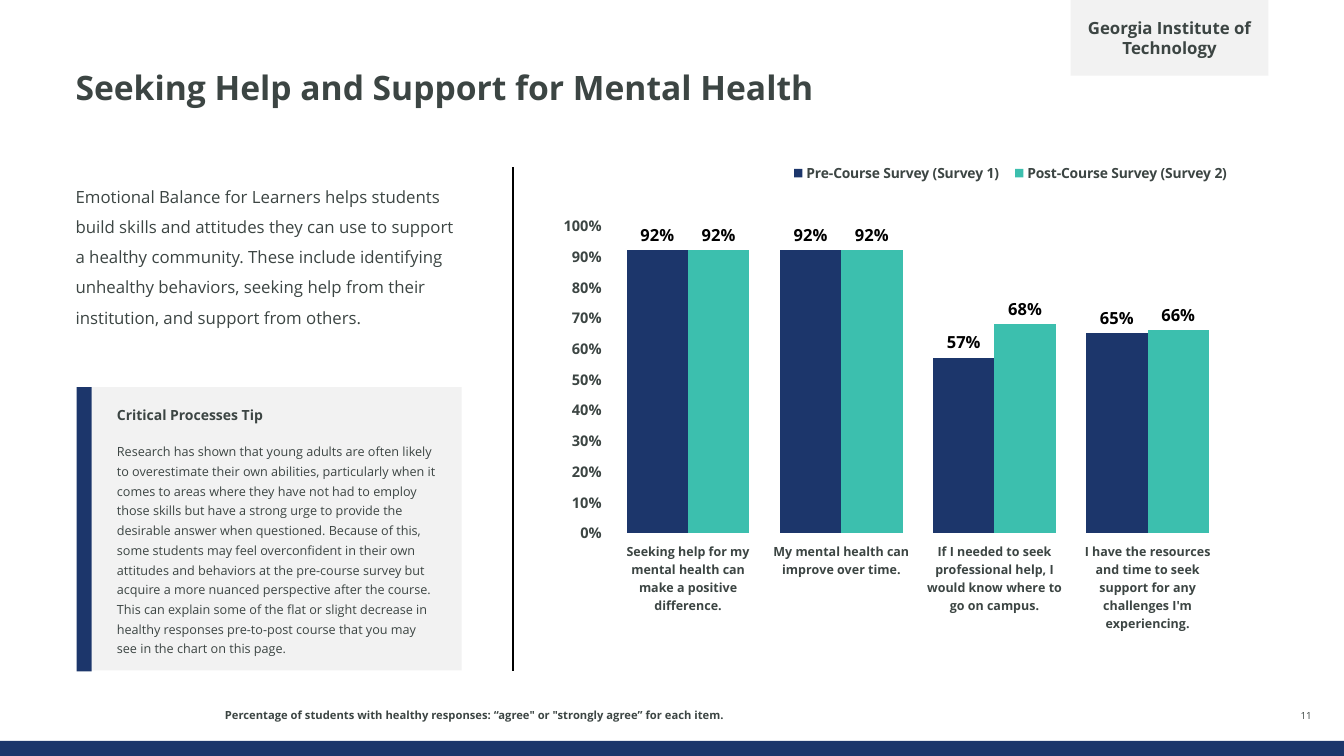
from dataclasses import dataclass

from lxml import etree
from pptx import Presentation
from pptx.chart.data import CategoryChartData
from pptx.dml.color import RGBColor
from pptx.enum.chart import XL_CHART_TYPE, XL_LABEL_POSITION, XL_LEGEND_POSITION
from pptx.enum.shapes import MSO_CONNECTOR, MSO_SHAPE
from pptx.enum.text import MSO_ANCHOR, PP_ALIGN
from pptx.oxml import parse_xml
from pptx.oxml.ns import nsdecls, qn
from pptx.util import Inches, Length, Pt

COLUMNS = XL_CHART_TYPE.COLUMN_CLUSTERED
OUTSIDE_END = XL_LABEL_POSITION.OUTSIDE_END
LEGEND_TOP = XL_LEGEND_POSITION.TOP
RECTANGLE = MSO_SHAPE.RECTANGLE
STRAIGHT = MSO_CONNECTOR.STRAIGHT
TOP, MIDDLE, BOTTOM = MSO_ANCHOR.TOP, MSO_ANCHOR.MIDDLE, MSO_ANCHOR.BOTTOM
LEFT, CENTER = PP_ALIGN.LEFT, PP_ALIGN.CENTER

Box = tuple[float, float, float, float]


@dataclass(frozen=True)
class Theme:
    font: str = "Open Sans"
    ink: str = "3C4543"
    black: str = "000000"
    navy: str = "1C366B"
    teal: str = "3CBFAE"
    panel: str = "F2F2F2"
    title: float = 24
    body: float = 12
    tip_heading: float = 10
    tip: float = 9
    footnote: float = 8
    page: float = 7
    category: float = 9
    percent: float = 10.5
    legend: float = 10
    value: float = 11.9


@dataclass(frozen=True)
class Line:
    text: str
    size: float
    bold: bool = False
    align: PP_ALIGN = LEFT
    spacing: float | Length = 1.0
    before: float = 0
    after: float = 0


@dataclass(frozen=True)
class TextBlock:
    box: Box
    line: Line
    anchor: MSO_ANCHOR = TOP


@dataclass(frozen=True)
class Survey:
    name: str
    values: tuple[float, ...]
    color: str


THEME = Theme()

TEXT_BLOCKS = (
    TextBlock((0.75, 0.71, 11.83, 0.7),
              Line("Seeking Help and Support for Mental Health", THEME.title, True, spacing=0.9)),
    TextBlock((0.75, 1.75, 3.83, 1.91),
              Line("Emotional Balance for Learners helps students build skills and attitudes they can "
                   "use to support a healthy community. These include identifying unhealthy behaviors, "
                   "seeking help from their institution, and support from others.",
                   THEME.body, spacing=1.5)),
    TextBlock((2.23, 7.01, 6.01, 0.15),
              Line("Percentage of students with healthy responses: “agree\" or \"strongly agree” "
                   "for each item.", THEME.footnote, True, spacing=Pt(12), after=2), BOTTOM),
    TextBlock((12.7, 7.01, 0.51, 0.15), Line("11", THEME.page, align=CENTER), BOTTOM),
)

TIP = (
    Line("Critical Processes Tip", THEME.tip_heading, True, spacing=1.3),
    Line("Research has shown that young adults are often likely to overestimate their own abilities, "
         "particularly when it comes to areas where they have not had to employ those skills but have "
         "a strong urge to provide the desirable answer when questioned. Because of this, some "
         "students may feel overconfident in their own attitudes and behaviors at the pre-course "
         "survey but acquire a more nuanced perspective after the course. This can explain some of "
         "the flat or slight decrease in healthy responses pre-to-post course that you may see in "
         "the chart on this page.", THEME.tip, spacing=1.3, before=12),
)

STATEMENTS = (
    "Seeking help for my mental health can make a positive difference.",
    "My mental health can improve over time.",
    "If I needed to seek professional help, I would know where to go on campus.",
    "I have the resources and time to seek support for any challenges I'm experiencing.",
)
SURVEYS = (
    Survey("Pre-Course Survey (Survey 1)", (0.92, 0.92, 0.57, 0.65), THEME.navy),
    Survey("Post-Course Survey (Survey 2)", (0.92, 0.92, 0.68, 0.66), THEME.teal),
)


def inches(box: Box) -> list[Length]:
    return [Inches(length) for length in box]


def style_font(font, size: float, bold: bool, color: str = THEME.ink) -> None:
    font.name, font.size, font.bold = THEME.font, Pt(size), bold
    font.color.rgb = RGBColor.from_string(color)


def write(frame, lines: tuple[Line, ...], anchor: MSO_ANCHOR, side_inset: float = 0) -> None:
    frame.word_wrap = True
    frame.vertical_anchor = anchor
    frame.margin_left = frame.margin_right = Inches(side_inset)
    frame.margin_top = frame.margin_bottom = 0
    for index, line in enumerate(lines):
        paragraph = frame.add_paragraph() if index else frame.paragraphs[0]
        paragraph.text = line.text
        paragraph.alignment = line.align
        paragraph.line_spacing = line.spacing
        paragraph.space_before, paragraph.space_after = Pt(line.before), Pt(line.after)
        style_font(paragraph.font, line.size, line.bold)


def add_block(shapes, box: Box, color: str):
    block = shapes.add_shape(RECTANGLE, *inches(box))
    block.shadow.inherit = False
    block.fill.solid()
    block.fill.fore_color.rgb = RGBColor.from_string(color)
    block.line.fill.background()
    return block


def add_divider(shapes, x: float, top: float, bottom: float) -> None:
    divider = shapes.add_connector(STRAIGHT, *inches((x, top, x, bottom)))
    divider.line.color.rgb = RGBColor.from_string(THEME.black)
    divider.line.width = Pt(1)
    etree.SubElement(divider.element.spPr, qn("a:effectLst"))


def manual_layout(box: Box, inner: bool = False):
    """Layout element holding fractions of the chart area."""
    target = '<c:layoutTarget val="inner"/>' if inner else ""
    modes = "".join(f'<c:{axis}Mode val="edge"/>' for axis in "xy")
    sizes = "".join(f'<c:{key} val="{value}"/>' for key, value in zip("xywh", box))
    return parse_xml(f'<c:layout {nsdecls("c")}><c:manualLayout>{target}{modes}{sizes}'
                     "</c:manualLayout></c:layout>")


def add_survey_chart(shapes, box: Box) -> None:
    data = CategoryChartData(number_format="0%")
    data.categories = STATEMENTS
    for survey in SURVEYS:
        data.add_series(survey.name, survey.values)
    chart = shapes.add_chart(COLUMNS, *inches(box), data).chart
    chart.has_title = False
    style_font(chart.font, THEME.legend, False)

    # Columns and value labels
    plot = chart.plots[0]
    plot.vary_by_categories = False
    plot.gap_width, plot.overlap = 50, 0
    for series, survey in zip(plot.series, SURVEYS):
        series.format.fill.solid()
        series.format.fill.fore_color.rgb = RGBColor.from_string(survey.color)
        labels = series.data_labels
        labels.show_value = True
        labels.position = OUTSIDE_END
        labels.number_format, labels.number_format_is_linked = "0%", False
        style_font(labels.font, THEME.value, True, THEME.black)

    # Axes
    for axis, size in ((chart.category_axis, THEME.category), (chart.value_axis, THEME.percent)):
        axis.has_major_gridlines = False
        axis.format.line.fill.background()
        style_font(axis.tick_labels.font, size, True)
    percent = chart.value_axis
    percent.minimum_scale, percent.maximum_scale, percent.major_unit = 0, 1, 0.1
    percent.tick_labels.number_format = "0%"
    percent.tick_labels.number_format_is_linked = False

    # Legend and plot placement
    chart.has_legend = True
    legend = chart.legend
    legend.position, legend.include_in_layout = LEGEND_TOP, False
    style_font(legend.font, THEME.legend, True)
    plot_area = chart.element.chart.plotArea
    for part in (plot_area, legend._element):
        for layout in part.findall(qn("c:layout")):
            part.remove(layout)
    plot_area.insert(0, manual_layout((0.059, 0.144, 0.9, 0.635), inner=True))
    legend._element.find(qn("c:legendPos")).addnext(manual_layout((0.31, 0.01, 0.67, 0.05)))


def main() -> None:
    deck = Presentation()
    deck.slide_width, deck.slide_height = Inches(13.33), Inches(7.5)
    shapes = deck.slides.add_slide(deck.slide_layouts[6]).shapes

    # Footer band, title, introduction, footnote and page number
    add_block(shapes, (0, 7.35, 13.33, 0.15), THEME.navy)
    for block in TEXT_BLOCKS:
        write(shapes.add_textbox(*inches(block.box)).text_frame, (block.line,), block.anchor)
    add_divider(shapes, 5.09, 1.66, 6.66)

    # Tip panel with its accent bar
    tip_group = shapes.add_group_shape().shapes
    tip_panel = add_block(tip_group, (0.91, 3.84, 3.67, 2.81), THEME.panel)
    write(tip_panel.text_frame, TIP, MIDDLE, 0.25)
    add_block(tip_group, (0.76, 3.84, 0.15, 2.82), THEME.navy)

    # Survey results and institution tag
    add_survey_chart(shapes, (5.59, 1.55, 6.83, 4.8))
    institution = add_block(shapes, (10.62, 0, 1.96, 0.75), THEME.panel)
    write(institution.text_frame,
          (Line("Georgia Institute of Technology", THEME.body, True, CENTER),), MIDDLE, 0.1)

    deck.save("out.pptx")


if __name__ == "__main__":
    main()
